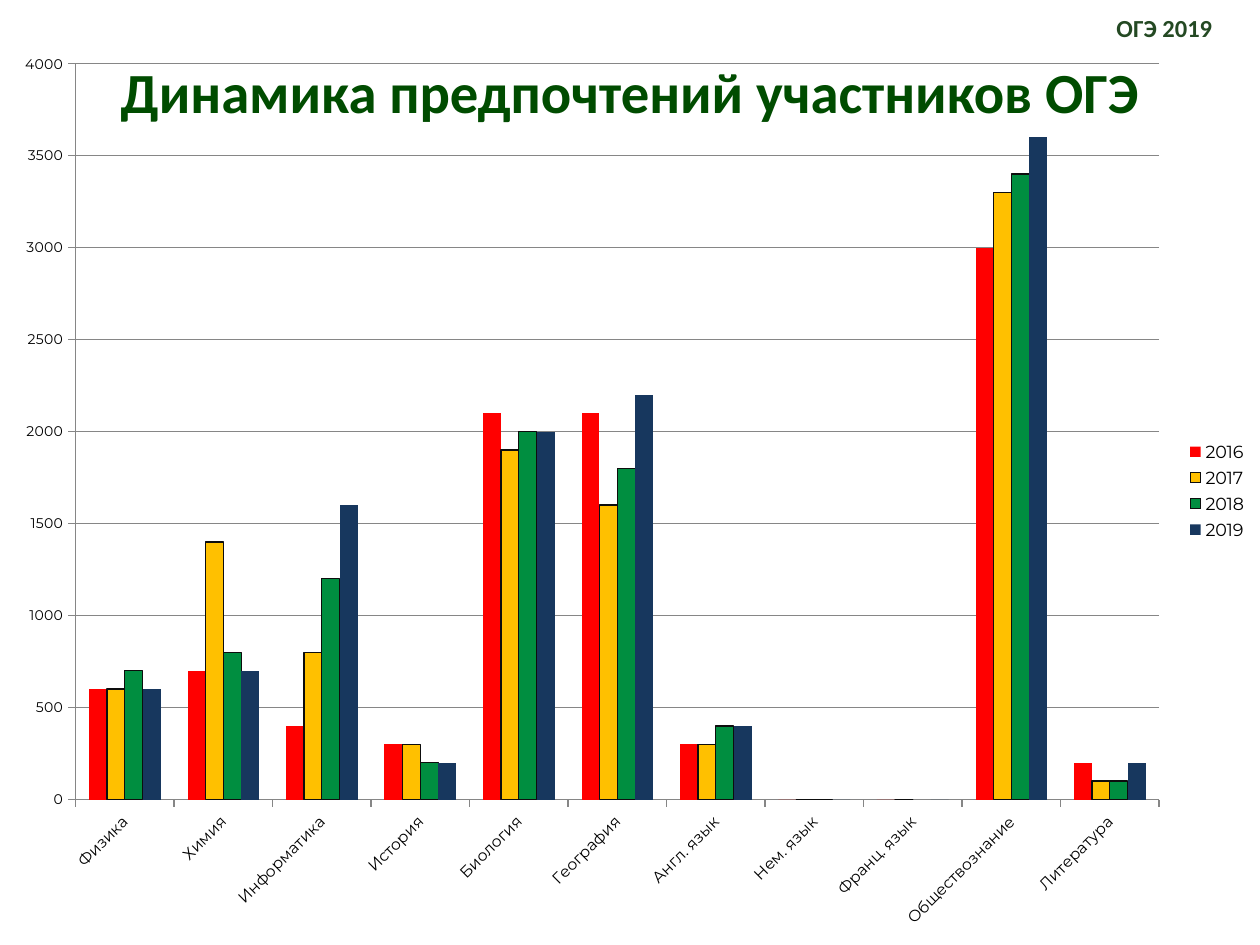
from lxml.etree import SubElement
from pptx import Presentation
from pptx.chart.data import CategoryChartData
from pptx.dml.color import RGBColor
from pptx.enum.chart import XL_CHART_TYPE, XL_LEGEND_POSITION, XL_TICK_MARK
from pptx.enum.text import MSO_ANCHOR, PP_ALIGN
from pptx.oxml.ns import qn
from pptx.util import Inches, Pt

SUBJECTS = ["Физика", "Химия", "Информатика", "История", "Биология", "География",
            "Англ. язык", "Нем. язык", "Франц. язык", "Обществознание", "Литература"]
# year: (fill, outline, participants by subject)
YEARS = {
    "2016": ("FF0000", None, [600, 700, 400, 300, 2100, 2100, 300, 0, 0, 3000, 200]),
    "2017": ("FFC000", "0D0D0D", [600, 1400, 800, 300, 1900, 1600, 300, 0, 0, 3300, 100]),
    "2018": ("008E40", "0D0D0D", [700, 800, 1200, 200, 2000, 1800, 400, 0, None, 3400, 100]),
    "2019": ("17375E", None, [600, 700, 1600, 200, 2000, 2200, 400, 0, 0, 3600, 200]),
}
GRID_COLOR = "868686"


def color(hex_code):
    return RGBColor.from_string(hex_code)


def place(shape, left, top, width, height):
    shape.left, shape.top = Inches(left), Inches(top)
    shape.width, shape.height = Inches(width), Inches(height)


def write(shape, text, size, hex_code, align, font="Calibri", bold=True):
    frame = shape.text_frame
    frame.word_wrap = True
    frame.vertical_anchor = MSO_ANCHOR.MIDDLE
    paragraph = frame.paragraphs[0]
    paragraph.alignment = align
    run = paragraph.add_run()
    run.text = text
    run.font.size, run.font.name, run.font.bold = Pt(size), font, bold
    run.font.color.rgb = color(hex_code)


def set_plot_layout(chart, **shares):
    """Fix the inner plot area as shares (x, y, w, h) of the chart's size."""
    plot_area = chart.element.find(".//" + qn("c:plotArea"))
    for old in plot_area.findall(qn("c:layout")):
        plot_area.remove(old)
    layout = SubElement(plot_area, qn("c:layout"))
    plot_area.insert(0, layout)
    manual = SubElement(layout, qn("c:manualLayout"))
    settings = {"layoutTarget": "inner", "xMode": "edge", "yMode": "edge", **shares}
    for tag, value in settings.items():
        SubElement(manual, qn("c:" + tag)).set("val", str(value))


def style_axis(axis, size):
    axis.major_tick_mark = XL_TICK_MARK.OUTSIDE
    axis.tick_labels.font.size = Pt(size)
    axis.format.line.color.rgb = color(GRID_COLOR)


def add_preferences_chart(slide, left, top, width, height):
    data = CategoryChartData()
    data.categories = SUBJECTS
    for year, (_, _, participants) in YEARS.items():
        data.add_series(year, participants)
    chart = slide.shapes.add_chart(
        XL_CHART_TYPE.COLUMN_CLUSTERED, Inches(left), Inches(top),
        Inches(width), Inches(height), data).chart
    chart.has_title = False
    chart.font.size, chart.font.name = Pt(10), "Montserrat"
    chart.font.color.rgb = color("000000")
    chart.has_legend = True
    chart.legend.position = XL_LEGEND_POSITION.RIGHT
    chart.legend.include_in_layout = False

    style_axis(chart.category_axis, 9)
    chart.category_axis.tick_labels._element.find(
        qn("c:txPr")).find(qn("a:bodyPr")).set("rot", "-2700000")
    counts = chart.value_axis
    style_axis(counts, 8)
    counts.minimum_scale, counts.maximum_scale, counts.major_unit = 0, 4000, 500
    counts.major_gridlines.format.line.color.rgb = color(GRID_COLOR)

    plot = chart.plots[0]
    plot.gap_width, plot.overlap = 150, 0
    plot.vary_by_categories = False
    for series, (fill, outline, _) in zip(plot.series, YEARS.values()):
        series.format.fill.solid()
        series.format.fill.fore_color.rgb = color(fill)
        if outline:
            series.format.line.color.rgb = color(outline)
            series.format.line.width = Pt(0.75)
        else:
            series.format.line.fill.background()
    set_plot_layout(chart, x=0.06, y=0.03, w=0.86, h=0.81)


def main():
    deck = Presentation()
    deck.slide_width, deck.slide_height = Inches(10), Inches(7.5)
    slide = deck.slides.add_slide(deck.slide_layouts[5])

    title = slide.shapes.title
    place(title, 0.5, 0.3, 9, 0.85)
    write(title, "Динамика предпочтений участников ОГЭ", 32.4, "004C00", PP_ALIGN.CENTER)

    exam_label = slide.shapes.add_textbox(0, 0, 0, 0)
    place(exam_label, 8.62, 0, 1.1, 0.44)
    write(exam_label, "ОГЭ 2019", 14, "244923", PP_ALIGN.RIGHT)

    add_preferences_chart(slide, 0, 0.29, 10, 7.21)
    deck.save("out.pptx")


if __name__ == "__main__":
    main()
